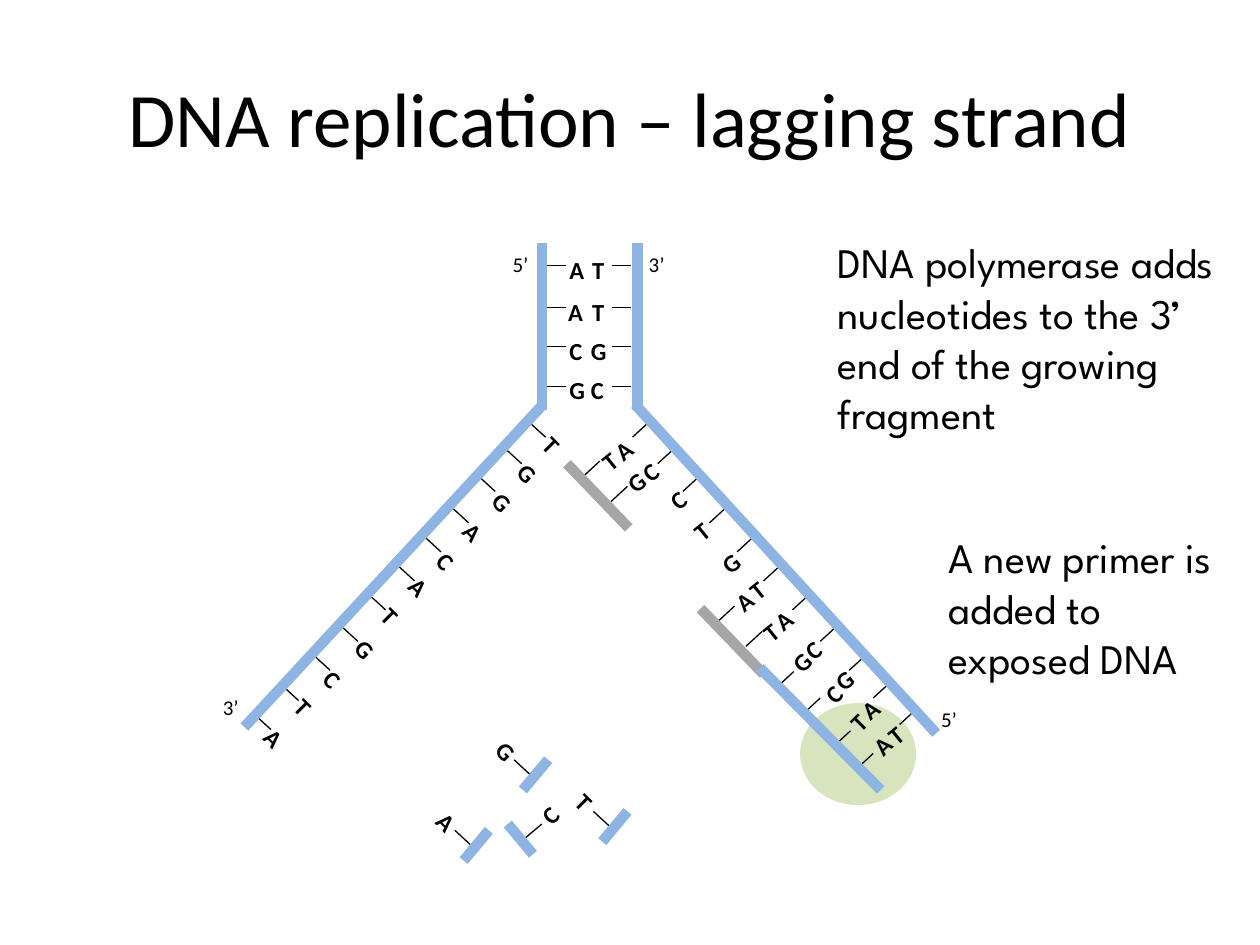
import pptx
import pptx.dml.color
import pptx.enum.shapes
import pptx.enum.text
import pptx.util
from pptx.oxml import parse_xml

EMU_PER_PX = 9144
BLACK, STRAND, PRIMER, ENZYME = "000000", "8EB4E3", "A6A6A6", "D7E4BD"
BOX = 31

PAIRS = [("A", 442, "T", 460, 194, 211), ("A", 441, "T", 460, 227, 244),
         ("C", 442, "G", 459, 258, 275), ("G", 442, "C", 459, 289, 307)]

LEFT_BASES = [("T", 426, 335, 421, 336), ("G", 406, 356, 402, 357),
              ("G", 386, 379, 381, 379), ("A", 363, 403, 360, 404),
              ("C", 342, 427, 338, 427), ("A", 320, 447, 317, 450),
              ("T", 298, 471, 294, 473), ("G", 277, 496, 272, 498),
              ("C", 252, 521, 250, 521), ("T", 229, 543, 225, 545),
              ("A", 205, 567, 203, 568)]

RIGHT_BASES = [("A", 476, 338, 514, 336), ("C", 498, 355, 534, 357),
               ("C", 520, 377, 554, 379), ("T", 539, 402, 575, 404),
               ("G", 561, 428, 597, 427), ("T", 583, 449, 618, 450),
               ("A", 603, 473, 641, 473), ("C", 627, 496, 663, 498),
               ("G", 651, 521, 686, 521), ("A", 672, 544, 705, 543),
               ("T", 693, 564, 726, 564)]

PRIMER_BASES = [("T", 466, 346, 463, 378), ("G", 486, 364, 485, 398),
                ("A", 572, 458, 570, 493), ("T", 594, 482, 592, 513)]

NEW_BASES = [("G", 617, 507, 617, 545), ("C", 643, 532, 638, 566),
             ("T", 663, 554, 662, 592), ("A", 681, 573, 680, 610)]

BASE_GROUPS = [(LEFT_BASES, 45, (12, 11)), (RIGHT_BASES, 321, (-12, 11)),
               (PRIMER_BASES, 321, (13, -12)), (NEW_BASES, 315, (13, -12))]

END_LABELS = [("5’", 397, 192), ("3’", 167, 543), ("5’", 737, 553), ("3’", 505, 192)]

FREE_RIGHT = [("G", 389, 577), ("A", 342, 633), ("T", 452, 618)]

BACKBONES = [((450, 368), (499, 419), PRIMER), ((556, 483), (606, 535), PRIMER),
             ((430, 193), (430, 325), STRAND), ((431, 321), (194, 577), STRAND),
             ((506, 193), (506, 325), STRAND), ((504, 321), (743, 582), STRAND),
             ((603, 530), (699, 627), STRAND)]


def px(value):
    return pptx.util.Emu(value * EMU_PER_PX)


def color(value):
    return pptx.dml.color.RGBColor.from_string(value)


def add_text(page, text, left, top, width, height, *, size, font="Calibri", bold=False,
             rotation=0, align=None, anchor=None, line_spacing=None, space_after=None,
             grow=False):
    box = page.shapes.add_textbox(px(left), px(top), px(width), px(height))
    box.rotation = rotation
    frame = box.text_frame
    frame.word_wrap = True
    if grow:
        frame.auto_size = pptx.enum.text.MSO_AUTO_SIZE.SHAPE_TO_FIT_TEXT
    if anchor is not None:
        frame.vertical_anchor = anchor
    para = frame.paragraphs[0]
    para.alignment = align
    para.line_spacing = line_spacing
    if space_after is not None:
        para.space_after = pptx.util.Pt(space_after)
    span = para.add_run()
    span.text = text
    span.font.name = font
    span.font.size = pptx.util.Pt(size)
    span.font.bold = bold
    span.font.color.rgb = color(BLACK)


def add_line(page, start, end, line_color=BLACK, width=0.75):
    line = page.shapes.add_connector(
        pptx.enum.shapes.MSO_CONNECTOR.STRAIGHT, *map(px, (*start, *end)))
    line.line.color.rgb = color(line_color)
    line.line.width = pptx.util.Pt(width)
    line._element.spPr.append(parse_xml(
        '<a:effectLst xmlns:a="http://schemas.openxmlformats.org/drawingml/2006/main"/>'))


def add_letter(page, letter, left, top, rotation=0):
    add_text(page, letter, left, top, BOX, BOX, size=14, bold=True, rotation=rotation,
             line_spacing=1.15, space_after=10)


def add_base(page, letter, left, top, rotation, rung, step):
    add_letter(page, letter, left, top, rotation)
    add_line(page, rung, (rung[0] + step[0], rung[1] + step[1]))


def add_free_nucleotide(page, letter, left, top, rotation, rung, step, back):
    add_base(page, letter, left, top, rotation, (left + rung[0], top + rung[1]), step)
    start, end = [(left + x, top + y) for x, y in back]
    add_line(page, start, end, STRAND, 6)


def add_polymerase(page):
    oval = page.shapes.add_shape(
        pptx.enum.shapes.MSO_SHAPE.OVAL, px(635), px(558), px(92), px(81))
    oval.shadow.inherit = False
    oval.fill.solid()
    oval.fill.fore_color.rgb = color(ENZYME)
    oval.line.fill.background()


def main():
    deck = pptx.Presentation()
    deck.slide_width, deck.slide_height = px(1000), px(750)
    page = deck.slides.add_slide(deck.slide_layouts[6])

    add_polymerase(page)
    add_text(page, "DNA replication – lagging strand", 50, 30, 900, 125, size=44,
             align=pptx.enum.text.PP_ALIGN.CENTER, anchor=pptx.enum.text.MSO_ANCHOR.MIDDLE)

    for left_letter, left_x, right_letter, right_x, top, rung_y in PAIRS:
        add_letter(page, left_letter, left_x, top)
        add_letter(page, right_letter, right_x, top)
        add_line(page, (434, rung_y), (449, rung_y))
        add_line(page, (501, rung_y), (486, rung_y))

    for bases, rotation, step in BASE_GROUPS:
        for letter, left, top, rung_x, rung_y in bases:
            add_base(page, letter, left, top, rotation, (rung_x, rung_y), step)

    for label, left, top in END_LABELS:
        add_text(page, label, left, top, 38, BOX, size=12, line_spacing=1.15, space_after=10)

    add_free_nucleotide(page, "C", 418, 628, 315, (-1, 37), (13, -11), ((-15, 26), (5, 50)))
    for letter, left, top in FREE_RIGHT:
        add_free_nucleotide(page, letter, left, top, 45, (32, 38), (-13, -12),
                            ((46, 26), (26, 50)))

    for start, end, line_color in BACKBONES:
        add_line(page, start, end, line_color, 6)

    add_text(page, "DNA polymerase adds nucleotides to the 3’ end of the growing fragment",
             655, 183, 329, 212, size=24, font="League Spartan", grow=True)
    add_text(page, "A new primer is added to exposed DNA",
             743, 417, 250, 131, size=24, font="League Spartan", grow=True)

    deck.save("out.pptx")


if __name__ == "__main__":
    main()
